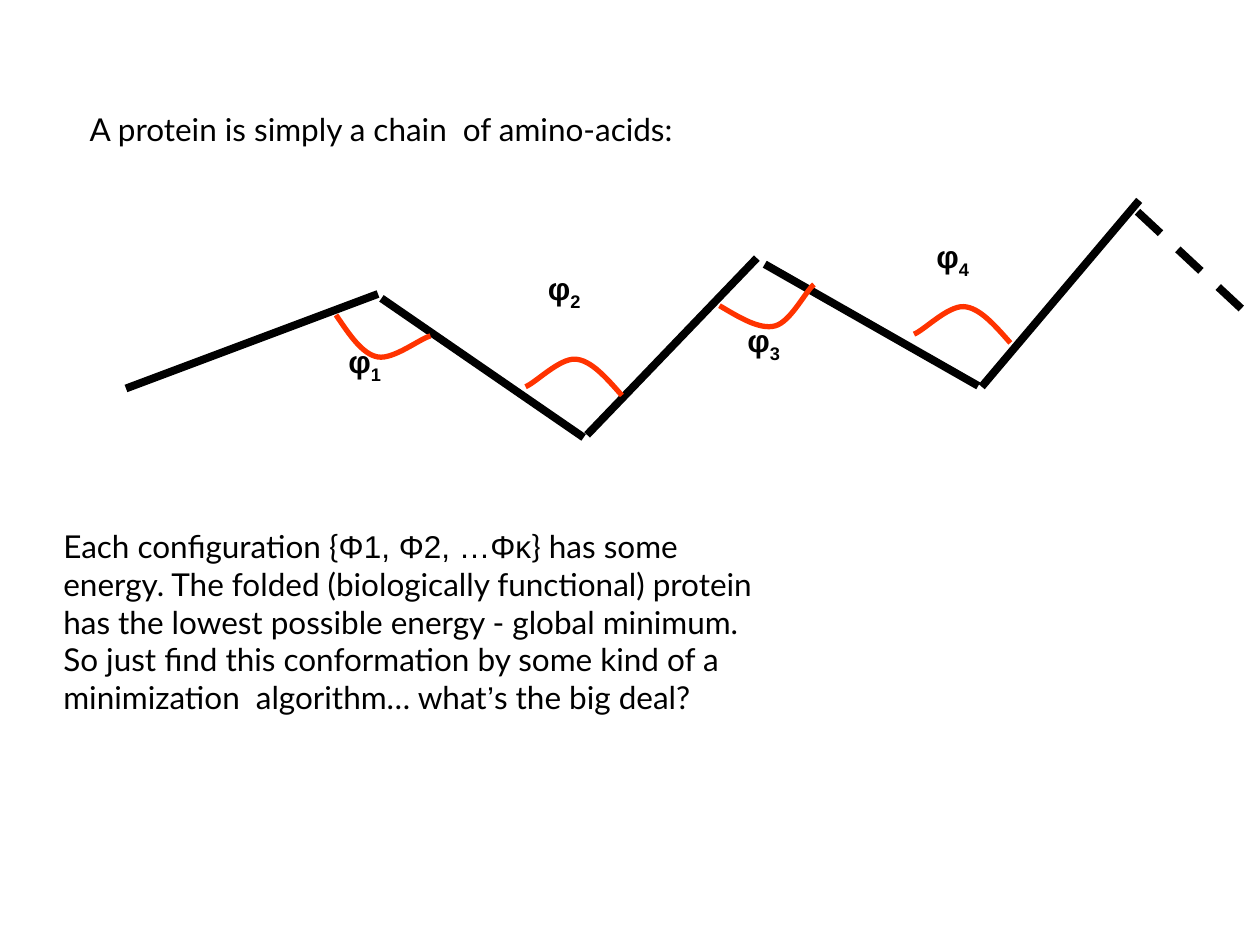
from lxml.etree import SubElement
from pptx import Presentation
from pptx.dml.color import RGBColor
from pptx.enum.dml import MSO_LINE
from pptx.enum.shapes import MSO_CONNECTOR as Connector
from pptx.enum.text import MSO_ANCHOR as Anchor, MSO_AUTO_SIZE as AutoSize, PP_ALIGN as Align
from pptx.oxml.ns import qn
from pptx.util import Pt

BLACK, RED = "000000", "FF3300"


def paint(color_format, color):
    color_format.rgb = RGBColor.from_string(color)


def write(paragraph, text, font_name, bold=False):
    """Add a run of 18 pt black text and return it."""
    run = paragraph.add_run()
    run.text = text
    for key, value in {"name": font_name, "size": Pt(18), "bold": bold}.items():
        setattr(run.font, key, value)
    paint(run.font.color, BLACK)
    return run


deck = Presentation()
deck.slide_width, deck.slide_height = Pt(720), Pt(540)
slide = deck.slides.add_slide(deck.slide_layouts[1])
title, body = slide.placeholders

# Title and explanation
frame_format = {"word_wrap": True, "auto_size": AutoSize.NONE, "vertical_anchor": Anchor.TOP}
for holder, box in ((title, (44, 59, 584, 45)), (body, (29, 297.5, 446, 117))):
    holder.left, holder.top, holder.width, holder.height = map(Pt, box)
    for key, value in frame_format.items():
        setattr(holder.text_frame, key, value)

heading = title.text_frame.paragraphs[0]
heading.alignment = Align.LEFT
write(heading, "A protein is simply a chain  of amino-acids:", "Lato")

# Each paragraph is a list of lines, each line a list of (text, font)
explanation = [
    [
        [("Each configuration {", "Lato"), ("Φ1, Φ2, …Φκ", "Arial"), ("} has some ", "Lato")],
        [("energy. The folded (biologically functional) protein", "Lato")],
        [("has the lowest possible energy - global minimum.", "Lato")],
    ],
    [[("So just find this conformation by some kind of a", "Lato")]],
    [[("minimization  algorithm… what", "Lato"), ("’", "Arial"), ("s the big deal?", "Lato")]],
]
for number, lines in enumerate(explanation):
    paragraph = body.text_frame.paragraphs[0] if number == 0 else body.text_frame.add_paragraph()
    properties = paragraph._p.get_or_add_pPr()
    properties.set("marL", "0")
    properties.set("indent", "0")
    SubElement(properties, qn("a:buNone"))
    paragraph.space_before = Pt(0)
    for line_number, line in enumerate(lines):
        if line_number:
            paragraph.add_line_break()
        for text, font_name in line:
            write(paragraph, text, font_name)

# Chain of bonds, the last one continuing beyond the slide
chain = slide.shapes.add_group_shape().shapes
bonds = [
    (72, 222, 216, 168, None),
    (218, 170.5, 333.5, 250, None),
    (335.5, 248.5, 432.5, 147.5, None),
    (437, 151, 559, 220.5, None),
    (561, 221, 651, 114.5, None),
    (650, 121, 717, 183.5, MSO_LINE.DASH),
]
for *ends, dash in bonds:
    bond = chain.add_connector(Connector.STRAIGHT, *map(Pt, ends))
    bond.line.width = Pt(4.5)
    paint(bond.line.color, BLACK)
    if dash:
        bond.line.dash_style = dash
    SubElement(bond.element.spPr, qn("a:effectLst"))

# One arc shape, placed and turned at each joint: start, then two Bézier triples
arc_points = [(0, 0), (7.5, 11), (15, 22.5), (24, 24), (33, 25.5), (48, 13.5), (54, 12)]
joints = [
    ((192, 180), 0, (192, 192)),
    ((300, 204), 172.7, (306, 150)),
    ((414, 162), 334.8, (420, 180)),
    ((522, 174), 172.7, (528, 132)),
]
for number, (arc_at, turn, label_at) in enumerate(joints, 1):
    builder = chain.build_freeform(0, 0)
    builder.add_line_segments([(Pt(x), Pt(y)) for x, y in arc_points[1:]], close=False)
    arc = builder.convert_to_shape(*map(Pt, arc_at))
    outline = arc.element.find(".//" + qn("a:path"))
    segments = outline.findall(qn("a:lnTo"))
    for first in (0, 3):
        curve = SubElement(outline, qn("a:cubicBezTo"))
        for segment in segments[first:first + 3]:
            curve.append(segment[0])
            outline.remove(segment)
    arc.rotation = turn
    arc.shadow.inherit = False
    arc.fill.background()
    arc.line.width = Pt(3)
    paint(arc.line.color, RED)

    label = chain.add_textbox(*map(Pt, (*label_at, 42, 45))).text_frame
    label.word_wrap = True
    write(label.paragraphs[0], "φ", "Arial", bold=True)
    subscript = write(label.paragraphs[0], str(number), "Arial", bold=True)
    subscript.font._element.set("baseline", "-25000")

deck.save("out.pptx")
